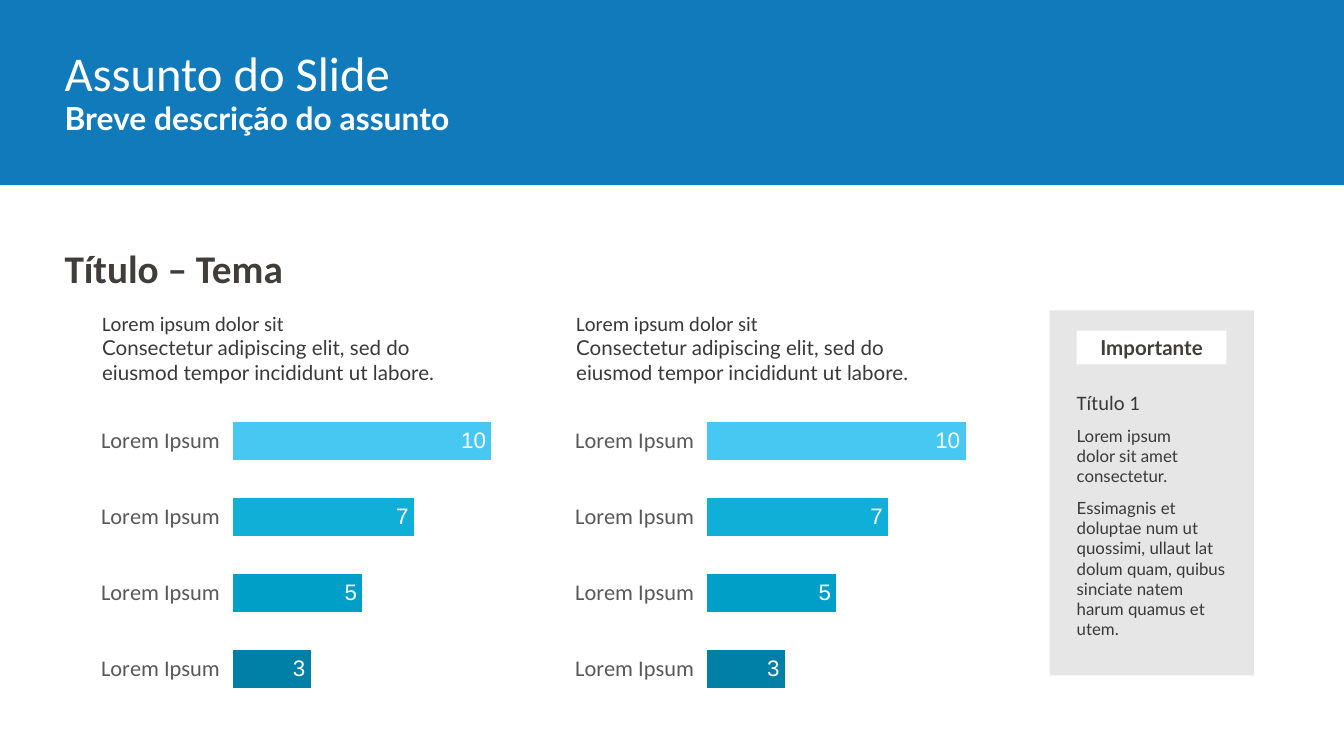
import pptx
import pptx.chart.data
import pptx.dml.color
import pptx.enum.chart
import pptx.enum.shapes
import pptx.enum.text
import pptx.oxml
import pptx.oxml.ns
import pptx.util

Cm = pptx.util.Cm
Pt = pptx.util.Pt
DARK, TEXT, WHITE = "403D3B", "393939", "FFFFFF"


def paint(fill, colour):
    fill.solid()
    fill.fore_color.rgb = pptx.dml.color.RGBColor.from_string(colour)


def write(box, paragraphs, after=0, align=pptx.enum.text.PP_ALIGN.LEFT,
          anchor=pptx.enum.text.MSO_ANCHOR.TOP):
    """Fill a box with paragraphs of (text, font, size, colour, bold) runs; None breaks the line."""
    frame = box.text_frame
    frame.word_wrap = True
    frame.auto_size = pptx.enum.text.MSO_AUTO_SIZE.NONE
    frame.vertical_anchor = anchor
    frame.margin_left = frame.margin_right = frame.margin_top = frame.margin_bottom = 0
    for index, spans in enumerate(paragraphs):
        para = frame.add_paragraph() if index else frame.paragraphs[0]
        para.alignment = align
        para.space_before = Pt(0)
        para.space_after = Pt(after)
        for item in spans:
            if item is None:
                para.add_line_break()
                continue
            span = para.add_run()
            span.text, span.font.name, size, colour, span.font.bold = item
            span.font.size = Pt(size)
            paint(span.font.fill, colour)


deck = pptx.Presentation()
deck.slide_width, deck.slide_height = Cm(25.4), Cm(14.29)
page = deck.slides.add_slide(deck.slide_layouts[5])
shapes = page.shapes

# Coloured areas: header band, side panel and its label
areas = []
for left, top, width, height, colour in [
    (0, 0, 25.4, 3.5, "117ABA"),
    (19.84, 5.87, 3.86, 6.9, "E6E6E6"),
    (20.35, 6.25, 2.83, 0.64, WHITE),
]:
    area = shapes.add_shape(pptx.enum.shapes.MSO_SHAPE.RECTANGLE,
                            Cm(left), Cm(top), Cm(width), Cm(height))
    area.shadow.inherit = False
    paint(area.fill, colour)
    area.line.fill.background()
    areas.append(area)
band, panel, label = areas

# Header and section title
title = shapes.title
title.element.addprevious(band.element)
title.left, title.top, title.width, title.height = Cm(1.22), Cm(0.81), Cm(8.5), Cm(1.07)
write(title, [[("Assunto do Slide", "Calibri", 26, WHITE, False)]])

subtitle = shapes.add_textbox(Cm(1.22), Cm(1.86), Cm(9.53), Cm(1.17))
write(subtitle, [[("Breve descrição do assunto", "Lato", 17, WHITE, True)]])

section = shapes.add_textbox(Cm(1.22), Cm(4.62), Cm(8.5), Cm(0.86))
write(section, [[("Título – Tema", "Calibri", 21, DARK, True)]])

# Two columns, each with an introduction above a bar chart
values = [3, 5, 7, 10]
bar_colours = ["007FA7", "009FC8", "0FAFD8", "47C8F2"]
plot_layout = {"xMode": "edge", "yMode": "edge", "x": 0.31, "y": 0.02, "w": 0.67, "h": 0.96}

for left in (1.7, 10.66):
    intro = shapes.add_textbox(Cm(left + 0.23), Cm(5.87), Cm(6.78), Cm(1.63))
    write(intro, [[
        ("Lorem ipsum dolor sit", "Calibri", 11, TEXT, False),
        None,
        ("Consectetur adipiscing elit, sed do eiusmod tempor incididunt ut labore.",
         "Lato", 11, TEXT, False),
    ]], after=8)

    data = pptx.chart.data.CategoryChartData()
    data.categories = ["Lorem Ipsum"] * len(values)
    data.add_series("Series 1", values)
    chart = shapes.add_chart(pptx.enum.chart.XL_CHART_TYPE.BAR_CLUSTERED,
                             Cm(left), Cm(7.49), Cm(8.74), Cm(6), data).chart
    chart.has_legend = False
    chart.has_title = False
    chart.font.name, chart.font.size = "Arial", Pt(10)
    paint(chart.font.fill, "000000")

    categories = chart.category_axis
    categories.format.line.fill.background()
    categories.major_tick_mark = pptx.enum.chart.XL_TICK_MARK.OUTSIDE
    names = categories.tick_labels.font
    names.name, names.size = "Calibri", Pt(12)
    paint(names.fill, "595959")

    scale = chart.value_axis
    scale.minimum_scale, scale.maximum_scale = 0, 12
    scale.has_major_gridlines = False
    scale.visible = False

    plot = chart.plots[0]
    plot.gap_width = 100
    plot.vary_by_categories = False
    bars = plot.series[0]
    paint(bars.format.fill, bar_colours[-1])
    for index, colour in enumerate(bar_colours[:-1]):
        paint(bars.points[index].format.fill, colour)

    numbers = bars.data_labels
    numbers.show_value = True
    numbers.position = pptx.enum.chart.XL_LABEL_POSITION.INSIDE_END
    numbers.font.name, numbers.font.size = "Arial", Pt(12)
    paint(numbers.font.fill, WHITE)

    # Fixed inner plot area, so that both charts keep the same bar lengths
    area = chart.element.chart.plotArea
    for old in area.findall(pptx.oxml.ns.qn("c:layout")):
        area.remove(old)
    settings = "".join(f'<c:{key} val="{value}"/>' for key, value in plot_layout.items())
    area.insert(0, pptx.oxml.parse_xml(
        f'<c:layout {pptx.oxml.ns.nsdecls("c")}><c:manualLayout>'
        f'<c:layoutTarget val="inner"/>{settings}</c:manualLayout></c:layout>'))

# Side panel
write(label, [[("Importante", "Lato", 11, DARK, True)]],
      align=pptx.enum.text.PP_ALIGN.CENTER, anchor=pptx.enum.text.MSO_ANCHOR.MIDDLE)
notice = shapes.add_textbox(Cm(20.35), Cm(7.37), Cm(2.83), Cm(5.08))
write(notice, [
    [("Título 1", "Calibri", 11, TEXT, False)],
    [("Lorem ipsum ", "Lato", 9, TEXT, False), None,
     ("dolor sit amet consectetur.", "Lato", 9, TEXT, False)],
    [("Essimagnis et doluptae num ut quossimi, ullaut lat dolum quam, "
      "quibus sinciate natem harum quamus et utem.", "Lato", 9, TEXT, False)],
], after=6)

deck.save("out.pptx")
